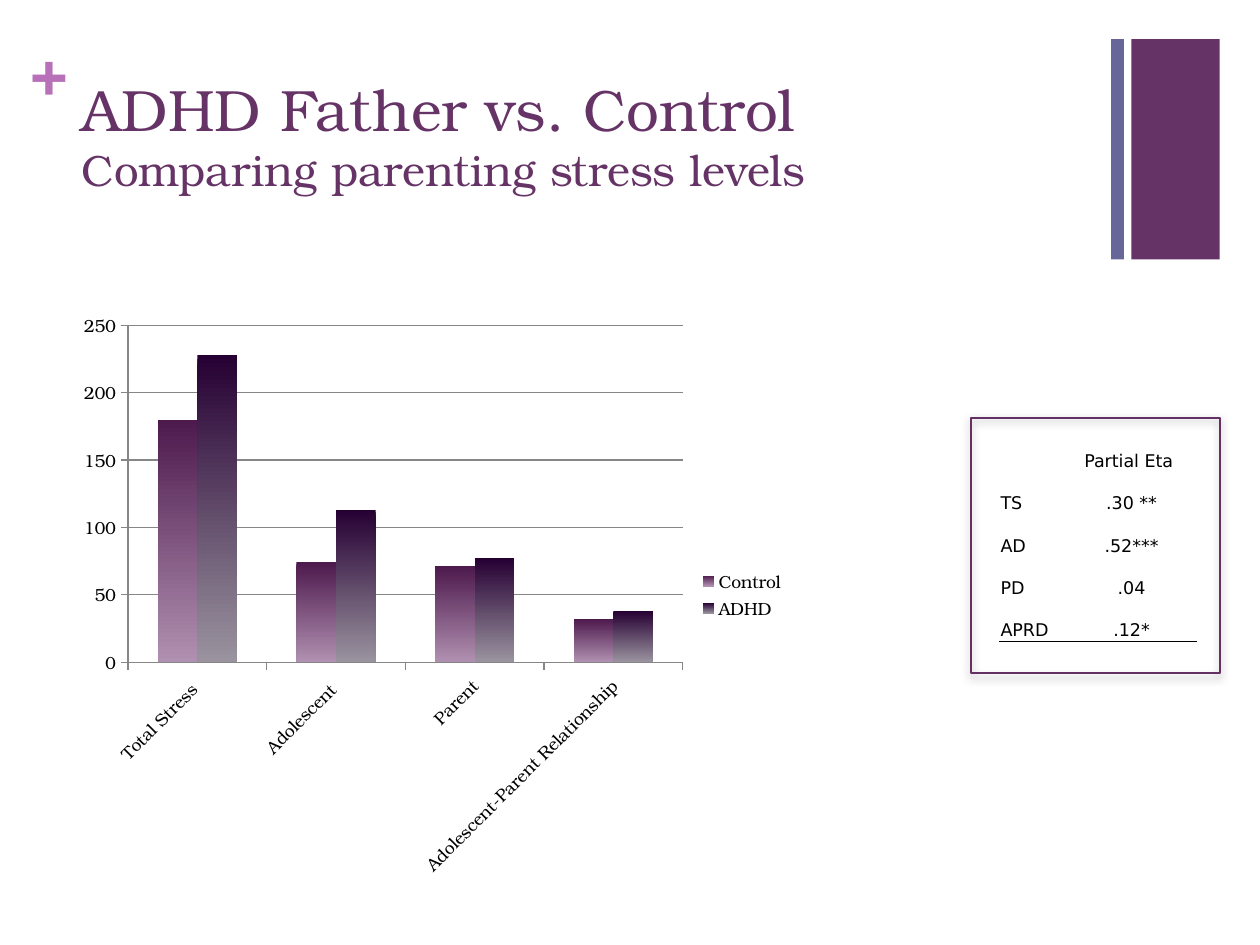
import pptx
import pptx.chart.data
import pptx.dml.color
import pptx.enum.chart
import pptx.enum.shapes
import pptx.enum.text
import pptx.oxml
import pptx.util

Pt = pptx.util.Pt
ALIGN = pptx.enum.text.PP_ALIGN
ANCHOR = pptx.enum.text.MSO_ANCHOR
NS = 'xmlns:a="http://schemas.openxmlformats.org/drawingml/2006/main"'
COLORS = {
    "plum": "663366", "slate": "666699", "orchid": "B870B8", "frame": "653165",
    "black": "000000", "white": "FFFFFF", "axis": "868686",
    "control_top": "4D1A4D", "control_bottom": "B090B0",
    "adhd_top": "260033", "adhd_bottom": "9A939F",
}


def rgb(name):
    return pptx.dml.color.RGBColor.from_string(COLORS[name])


class SlideBuilder:
    serif = "TeX Gyre Bonum"
    sans = "DejaVu Sans"

    def __init__(self, slide):
        self.s = slide

    def font(self, font, size, color, name=None, bold=False):
        font.name = name or self.serif
        font.size = Pt(size)
        font.bold = bold
        font.color.rgb = rgb(color)

    def run(self, p, text, size, color, **style):
        r = p.add_run()
        r.text = text
        self.font(r.font, size, color, **style)

    def title(self, box, lines):
        sp = self.s.shapes.title
        sp.left, sp.top, sp.width, sp.height = map(Pt, box)
        tf = sp.text_frame
        tf.vertical_anchor = ANCHOR.TOP
        tf.word_wrap = True
        p = tf.paragraphs[0]
        p.alignment = ALIGN.LEFT
        for i, (text, size) in enumerate(lines):
            if i:
                p.add_line_break()
            self.run(p, text, size, "plum")

    def text(self, box, text, size, color, **style):
        tf = self.s.shapes.add_textbox(*map(Pt, box)).text_frame
        tf.margin_left = tf.margin_right = tf.margin_top = tf.margin_bottom = 0
        tf.word_wrap = True
        self.run(tf.paragraphs[0], text, size, color, **style)

    def shape(self, kind, box, fill=None, line=None):
        sp = self.s.shapes.add_shape(kind, *map(Pt, box))
        sp.shadow.inherit = False
        if fill:
            sp.fill.solid()
            sp.fill.fore_color.rgb = rgb(fill)
        else:
            sp.fill.background()
        if line:
            sp.line.color.rgb = rgb(line)
            sp.line.width = Pt(1)
        else:
            sp.line.fill.background()
        return sp

    def soft_shadow(self, sp):
        effects = sp._element.spPr.find(pptx.oxml.ns.qn("a:effectLst"))
        effects.append(pptx.oxml.parse_xml(
            f'<a:outerShdw {NS} blurRad="{Pt(5)}" dist="{Pt(2)}" dir="5400000" rotWithShape="0">'
            '<a:srgbClr val="808080"><a:alpha val="75000"/></a:srgbClr></a:outerShdw>'))

    def column_chart(self, box, categories, series):
        data = pptx.chart.data.CategoryChartData()
        data.categories = categories
        for name, values, _ in series:
            data.add_series(name, values)
        chart = self.s.shapes.add_chart(
            pptx.enum.chart.XL_CHART_TYPE.COLUMN_CLUSTERED, *map(Pt, box), data).chart
        self.font(chart.font, 10, "black")
        chart.has_title = False
        chart.has_legend = True
        chart.legend.position = pptx.enum.chart.XL_LEGEND_POSITION.RIGHT
        chart.legend.include_in_layout = False
        plot = chart.plots[0]
        plot.gap_width, plot.overlap, plot.vary_by_categories = 150, 0, False
        for ser, (_, _, key) in zip(plot.series, series):
            fill = ser.format.fill
            fill.gradient()
            fill.gradient_angle = 270
            for stop, end, position in zip(fill.gradient_stops, ("top", "bottom"), (0, 1)):
                stop.color.rgb = rgb(f"{key}_{end}")
                stop.position = position
        chart.value_axis.maximum_scale = 250
        chart.value_axis.major_unit = 50
        chart.value_axis.has_major_gridlines = True
        for part in (chart.value_axis, chart.category_axis, chart.value_axis.major_gridlines):
            part.format.line.color.rgb = rgb("axis")
            part.format.line.width = Pt(0.75)
        # Slanted category labels
        labels = chart.category_axis.tick_labels
        self.font(labels.font, 10, "black")
        chart.category_axis._element.txPr.bodyPr.set("rot", "-2700000")

    def table(self, box, widths, rows):
        table = self.s.shapes.add_table(len(rows), len(widths), *map(Pt, box)).table
        table.first_row = table.horz_banding = False
        for col, width in zip(table.columns, widths):
            col.width = Pt(width)
        for i, row in enumerate(rows):
            table.rows[i].height = Pt(box[3] / len(rows))
            for j, text in enumerate(row):
                self.cell(table.cell(i, j), text, ALIGN.CENTER if j else ALIGN.LEFT)

    def cell(self, cell, text, align):
        cell.margin_left = cell.margin_right = cell.margin_top = Pt(0.75)
        cell.margin_bottom = 0
        cell.vertical_anchor = ANCHOR.BOTTOM
        p = cell.text_frame.paragraphs[0]
        p.alignment = align
        if text:
            self.run(p, text, 10, "black", name=self.sans)
        else:
            p.font.size = Pt(10)
        # Rule under each row only
        tcPr = cell._tc.get_or_add_tcPr()
        rule = f'<a:solidFill><a:srgbClr val="{COLORS["black"]}"/></a:solidFill>'
        for side, paint in zip("LRTB", ["<a:noFill/>"] * 3 + [rule]):
            tcPr.append(pptx.oxml.parse_xml(
                f'<a:ln{side} {NS} w="{Pt(0.5)}">{paint}</a:ln{side}>'))
        cell.fill.solid()
        cell.fill.fore_color.rgb = rgb("white")


def main():
    prs = pptx.Presentation()
    prs.slide_width, prs.slide_height = Pt(720), Pt(540)
    b = SlideBuilder(prs.slides.add_slide(prs.slide_layouts[5]))
    shapes = pptx.enum.shapes.MSO_SHAPE

    # Corner decoration
    b.shape(shapes.RECTANGLE, (646.5, 22.3, 50.5, 126), "plum")
    b.shape(shapes.RECTANGLE, (635, 22.3, 7.3, 126), "slate")
    b.text((17.3, 18, 21, 44), "+", 36, "orchid", bold=True)

    # Title
    b.title((39.6, 38.2, 594.7, 87.8),
            [("ADHD Father vs. Control ", 33.3), ("Comparing parenting stress levels", 25)])

    # Stress levels by group
    b.column_chart(
        (39.6, 172.8, 419, 334),
        ["Total Stress ", "Adolescent ", "Parent", "Adolescent-Parent Relationship"],
        [("Control ", (180, 74, 71, 32), "control"), ("ADHD ", (228, 113, 77, 38), "adhd")])

    # Effect sizes in a frame
    b.table((571, 245.4, 113, 121), (38.2, 74.8),
            [("", "Partial Eta "), ("TS", ".30 **"), ("AD", ".52***"),
             ("PD", ".04"), ("APRD", ".12*")])
    b.soft_shadow(b.shape(shapes.FLOWCHART_PROCESS, (555, 238.7, 142, 146), line="frame"))

    prs.save("out.pptx")


if __name__ == "__main__":
    main()
